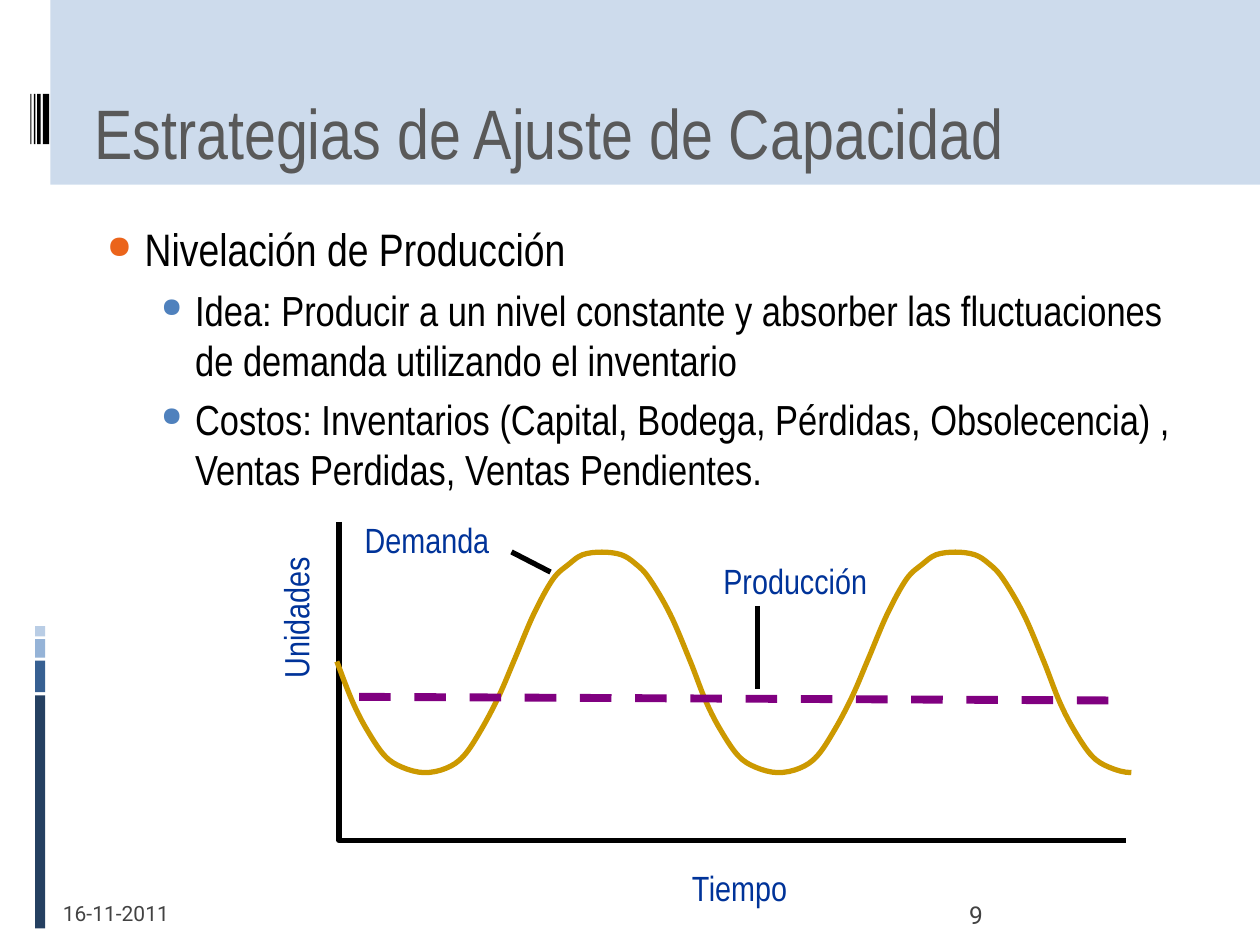
from lxml.etree import SubElement
from pptx import Presentation
from pptx.dml.color import RGBColor
from pptx.enum.dml import MSO_LINE
from pptx.enum.shapes import MSO_CONNECTOR, MSO_SHAPE
from pptx.enum.text import MSO_ANCHOR, PP_ALIGN
from pptx.oxml.ns import qn
from pptx.util import Pt

HUES = {
    "white": "FFFFFF", "black": "000000", "band": "B9CDE5", "navy": "254061",
    "steel": "376092", "sky": "95B3D7", "title": "595959", "foot": "424242",
    "label": "003399", "demand": "CC9900", "output": "800080",
    "orange": "EB641B", "blue": "4F81BD",
}
NARROW = "Arial Narrow"
PERIOD = 202
WAVE = [
    (192.5, 378), (201.5, 401), (210, 417.5), (220, 432), (230, 438.5),
    (242.5, 441.5), (255, 439), (265, 432), (275, 417), (285, 398),
    (294, 377), (305, 351), (316, 331), (325, 322.5), (333, 317),
    (344, 315.5), (355, 317), (363, 322), (371, 330.5), (383, 351),
]
BARS = [
    (20, 397.4, 5.8, 133.2, "navy"), (20, 377.5, 5.8, 18, "steel"),
    (20, 365.3, 5.8, 10.5, "sky"), (20, 357.8, 5.8, 5.8, "band"),
    (24.5, 53.6, 3.6, 28.8, "black"), (21.2, 53.6, 2, 28.8, "black"),
    (19.4, 53.6, 0.9, 28.8, "black"), (17.3, 53.6, 0.7, 28.8, "black"),
]
BODY = [
    (0, "Nivelación de Producción"),
    (1, "Idea: Producir a un nivel constante y absorber las fluctuaciones "
        "de demanda utilizando el inventario"),
    (1, "Costos: Inventarios (Capital, Bodega, Pérdidas, Obsolecencia) , "
        "Ventas Perdidas, Ventas Pendientes."),
]
LEVELS = [(26, 21.6, -21.6, "orange", 70), (24, 50.4, -19.4, "blue", 64)]
LABELS = [
    ("Demanda", 201.3, 292.6, 130.3, 0), ("Unidades", 123.4, 334, 90.7, 270),
    ("Tiempo", 388.3, 491.8, 78.5, 0), ("Producción", 406.3, 316, 125.3, 0),
]


def tint(name):
    """Return the named colour."""
    return RGBColor.from_string(HUES[name])


def add_bar(slide, x, y, w, h, hue, alpha=100):
    """Add a plain filled rectangle."""
    bar = slide.shapes.add_shape(MSO_SHAPE.RECTANGLE, Pt(x), Pt(y), Pt(w), Pt(h))
    bar.shadow.inherit = False
    bar.fill.solid()
    bar.fill.fore_color.rgb = tint(hue)
    bar.line.fill.background()
    if alpha < 100:
        color = bar._element.spPr.find(qn("a:solidFill"))[0]
        SubElement(color, qn("a:alpha"), val=str(alpha * 1000))


def add_box(slide, x, y, w, h, pads=(7.2, 3.6, 7.2, 3.6), anchor=MSO_ANCHOR.TOP):
    """Add an empty wrapping text box."""
    box = slide.shapes.add_textbox(Pt(x), Pt(y), Pt(w), Pt(h))
    frame = box.text_frame
    frame.word_wrap = True
    frame.vertical_anchor = anchor
    frame.margin_left, frame.margin_top, frame.margin_right, frame.margin_bottom = map(Pt, pads)
    return box


def add_run(para, text, size, hue, face=NARROW):
    """Add a styled run to a paragraph."""
    run = para.add_run()
    run.text = text
    run.font.size = Pt(size)
    run.font.name = face
    run.font.color.rgb = tint(hue)


def add_body(slide):
    """Add the bulleted text."""
    frame = add_box(slide, 54, 122.9, 635, 375).text_frame
    for row, (level, text) in enumerate(BODY):
        size, left, hang, hue, scale = LEVELS[level]
        para = frame.add_paragraph() if row else frame.paragraphs[0]
        para.level = level
        para.space_before = Pt(4.7 if row else 0)
        props = para._p.get_or_add_pPr()
        props.set("marL", str(Pt(left)))
        props.set("indent", str(Pt(hang)))
        color = SubElement(props, qn("a:buClr"))
        SubElement(color, qn("a:srgbClr"), val=HUES[hue])
        SubElement(props, qn("a:buSzPct"), val=str(scale * 1000))
        SubElement(props, qn("a:buChar"), char="●")
        add_run(para, text, size, "black")


def add_line(slide, start, end, hue="black", width=3, dash=None):
    """Add a straight line."""
    line = slide.shapes.add_connector(MSO_CONNECTOR.STRAIGHT, *map(Pt, start + end))
    line.line.color.rgb = tint(hue)
    line.line.width = Pt(width)
    line.line.dash_style = dash
    SubElement(line._element.spPr, qn("a:effectLst"))


def add_path(slide, points, hue):
    """Add an open outline through the points."""
    spots = [(Pt(x), Pt(y)) for x, y in points]
    pen = slide.shapes.build_freeform(*spots[0], scale=1.0)
    pen.add_line_segments(spots[1:], close=False)
    path = pen.convert_to_shape()
    path.shadow.inherit = False
    path.fill.background()
    path.line.color.rgb = tint(hue)
    path.line.width = Pt(3)
    return path


def bend(path):
    """Turn the straight segments of an outline into smooth curves."""
    track = path._element.spPr.find(".//" + qn("a:path"))
    spots = [(int(pt.get("x")), int(pt.get("y"))) for pt in track.iter(qn("a:pt"))]
    final = (2 * spots[-1][0] - spots[-2][0], spots[-2][1])
    ends = [spots[0], *spots, final]
    for step in track.findall(qn("a:lnTo")):
        track.remove(step)
    for a, b, c, d in zip(ends, ends[1:], ends[2:], ends[3:]):
        first = [q + (r - p) / 6 for p, q, r in zip(a, b, c)]
        second = [q - (r - p) / 6 for p, q, r in zip(b, c, d)]
        curve = SubElement(track, qn("a:cubicBezTo"))
        for x, y in (first, second, c):
            SubElement(curve, qn("a:pt"), x=str(round(x)), y=str(round(y)))


def add_graph(slide):
    """Add the axes, both curves and their labels."""
    add_path(slide, [(193.7, 298.2), (193.7, 480.2), (643.7, 480.2)], "black")
    knots = [(x + turn * PERIOD, y) for turn in range(3) for x, y in WAVE]
    bend(add_path(slide, [knot for knot in knots if knot[0] <= 647], "demand"))
    add_line(slide, (314.6, 326.9), (292.3, 315.4))
    add_line(slide, (205.2, 398.2), (637.2, 400.3), "output", 4.5, MSO_LINE.DASH)
    add_line(slide, (432.7, 346.3), (432.7, 393.8))
    for text, x, y, w, turn in LABELS:
        box = add_box(slide, x, y, w, 31)
        box.rotation = turn
        add_run(box.text_frame.paragraphs[0], text, 20, "label")


def add_foot(slide, text, x, y, w, size, align):
    """Add a footer entry."""
    box = add_box(slide, x, y, w, 28.8, (0, 0, 0, 0), MSO_ANCHOR.BOTTOM)
    para = box.text_frame.paragraphs[0]
    para.alignment = align
    add_run(para, text, size, "foot", "Roboto")


def main():
    """Build and save the slide."""
    deck = Presentation()
    deck.slide_width, deck.slide_height = Pt(720), Pt(540)
    slide = deck.slides.add_slide(deck.slide_layouts[6])
    add_bar(slide, 0, 0, 720, 105.6, "band", 70)
    add_bar(slide, 0, 0, 28.8, 540, "white")
    for bar in BARS:
        add_bar(slide, *bar)
    head = add_box(slide, 54, 9.4, 635, 90, (0, 3.6, 0, 0), MSO_ANCHOR.BOTTOM)
    add_run(head.text_frame.paragraphs[0], "Estrategias de Ajuste de Capacidad", 40, "title")
    add_body(slide)
    add_foot(slide, "16-11-2011", 36, 500.4, 80, 12, PP_ALIGN.LEFT)
    add_foot(slide, "9", 501.8, 502.2, 59.8, 14, PP_ALIGN.RIGHT)
    add_graph(slide)
    deck.save("out.pptx")


if __name__ == "__main__":
    main()
